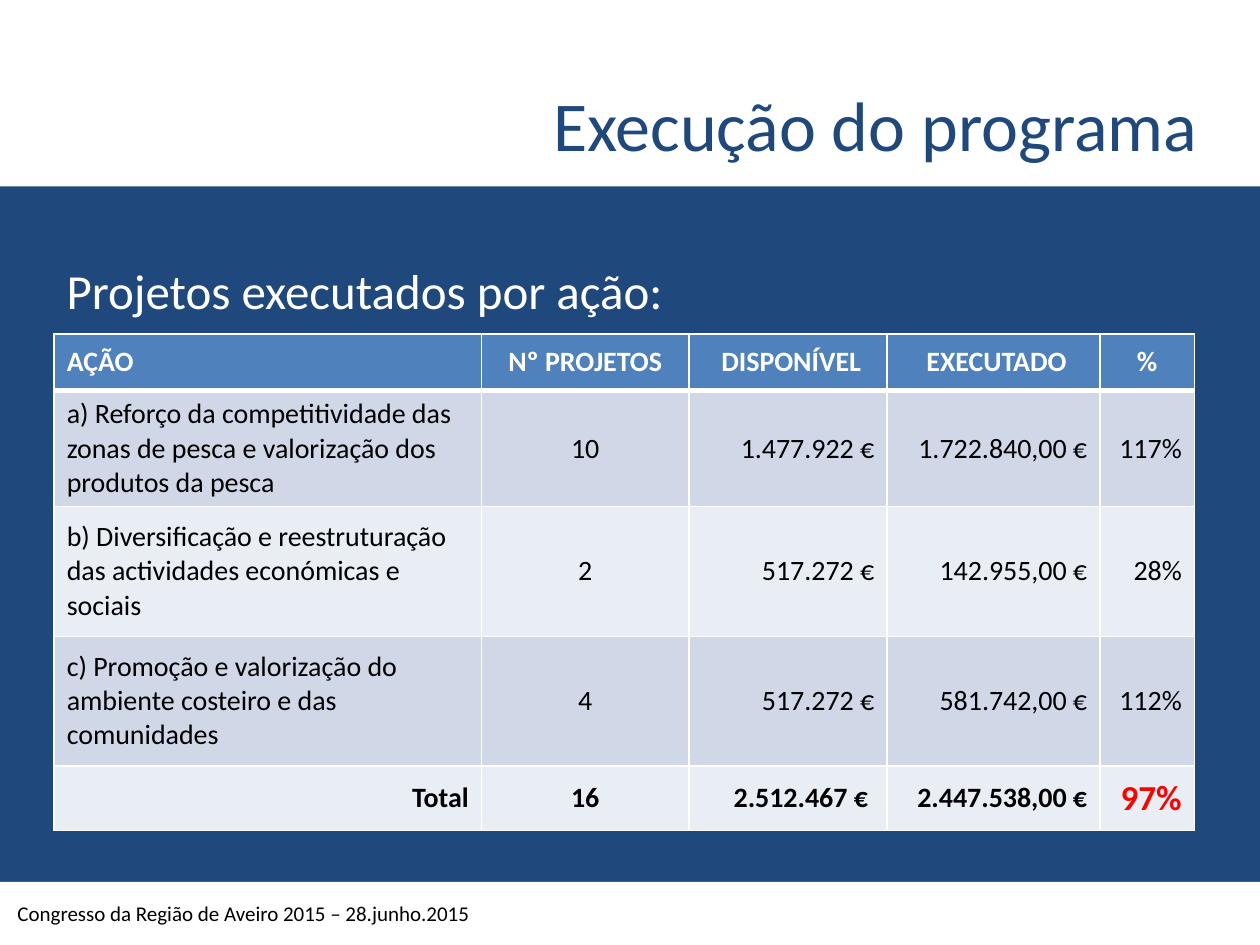
from lxml.etree import SubElement
from pptx import Presentation
from pptx.dml.color import RGBColor
from pptx.enum.shapes import MSO_SHAPE as Shape
from pptx.enum.text import MSO_ANCHOR as Anchor, PP_ALIGN as Align
from pptx.oxml.ns import qn
from pptx.util import Inches, Pt

# Content
TITLE = "Execução do programa"
SUBTITLE = "Projetos executados por ação:"
FOOTER = "Congresso da Região de Aveiro 2015 – 28.junho.2015"
ROWS = [
    ("AÇÃO", "Nº PROJETOS", " DISPONÍVEL", " EXECUTADO", "%"),
    ("a) Reforço da competitividade das zonas de pesca e valorização dos produtos da pesca",
     "10", "1.477.922 €", "1.722.840,00 €", "117%"),
    ("b) Diversificação e reestruturação das actividades económicas e sociais",
     "2", "517.272 €", "142.955,00 €", "28%"),
    ("c) Promoção e valorização do ambiente costeiro e das comunidades",
     "4", "517.272 €", "581.742,00 €", "112%"),
    ("Total", "16", "2.512.467 € ", "2.447.538,00 €", "97%"),
]
COLUMN_WIDTHS = [3.39, 1.65, 1.57, 1.69, 0.75]
ROW_HEIGHTS = [0.45, 0.92, 1.03, 1.03, 0.51]
HEADER_ALIGN = [Align.LEFT] + [Align.CENTER] * 4
BODY_ALIGN = [Align.LEFT, Align.CENTER] + [Align.RIGHT] * 3
TOTAL_ALIGN = [Align.RIGHT] + BODY_ALIGN[1:]

NAVY = RGBColor(0x1F, 0x49, 0x7D)
BLUE = RGBColor(0x4F, 0x81, 0xBD)
BAND_DARK = RGBColor(0xD0, 0xD8, 0xE8)
BAND_LIGHT = RGBColor(0xE9, 0xED, 0xF4)
WHITE = RGBColor(0xFF, 0xFF, 0xFF)
BLACK = RGBColor(0, 0, 0)
RED = RGBColor(0xFF, 0, 0)


def write(frame, text, size=16, color=BLACK, bold=False, align=Align.LEFT):
    para = frame.paragraphs[0]
    para.alignment = align
    span = para.add_run()
    span.text = text
    span.font.name = "Calibri"
    span.font.size = Pt(size)
    span.font.bold = bold
    span.font.color.rgb = color


def add_text(page, place, text, anchor=Anchor.TOP, wrap=True, margins=None, **style):
    frame = page.shapes.add_textbox(*map(Inches, place)).text_frame
    frame.word_wrap = wrap
    frame.vertical_anchor = anchor
    if margins:
        (frame.margin_left, frame.margin_top,
         frame.margin_right, frame.margin_bottom) = map(Inches, margins)
    write(frame, text, **style)


def add_band(page, top, height):
    band = page.shapes.add_shape(Shape.RECTANGLE, 0, Inches(top), Inches(10), Inches(height))
    band.shadow.inherit = False
    band.fill.solid()
    band.fill.fore_color.rgb = WHITE
    band.line.fill.background()


def set_borders(cell, bottom=1, top=1):
    properties = cell._tc.get_or_add_tcPr()
    for side, width in (("L", 1), ("R", 1), ("T", top), ("B", bottom)):
        line = SubElement(properties, qn(f"a:ln{side}"), w=str(Pt(width)))
        SubElement(SubElement(line, qn("a:solidFill")), qn("a:srgbClr"), val=str(WHITE))


def add_project_table(page):
    table = page.shapes.add_table(
        len(ROWS), len(COLUMN_WIDTHS), Inches(0.43), Inches(2.65),
        Inches(sum(COLUMN_WIDTHS)), Inches(sum(ROW_HEIGHTS))).table
    for column, width in zip(table.columns, COLUMN_WIDTHS):
        column.width = Inches(width)
    last = len(ROWS) - 1
    for r, values in enumerate(ROWS):
        table.rows[r].height = Inches(ROW_HEIGHTS[r])
        header, total = r == 0, r == last
        aligns = HEADER_ALIGN if header else TOTAL_ALIGN if total else BODY_ALIGN
        for c, text in enumerate(values):
            cell = table.cell(r, c)
            cell.vertical_anchor = Anchor.MIDDLE
            set_borders(cell, bottom=3 if header else 1, top=3 if r == 1 else 1)
            cell.fill.solid()
            cell.fill.fore_color.rgb = BLUE if header else BAND_DARK if r % 2 else BAND_LIGHT
            highlight = total and c == len(values) - 1
            write(cell.text_frame, text, size=20 if highlight else 16,
                  color=RED if highlight else WHITE if header else BLACK,
                  bold=header or total, align=aligns[c])


def main():
    deck = Presentation()
    deck.slide_width, deck.slide_height = Inches(10), Inches(7.5)
    page = deck.slides.add_slide(deck.slide_layouts[6])
    page.background.fill.solid()
    page.background.fill.fore_color.rgb = NAVY

    # White bands for footer and title
    add_band(page, 7, 0.5)
    add_band(page, 0, 1.48)

    # Table and texts
    add_project_table(page)
    add_text(page, (0.43, 2.02, 4.99, 0.57), SUBTITLE, wrap=False, size=28, color=WHITE)
    add_text(page, (0.04, 7.05, 4.37, 0.4), FOOTER, anchor=Anchor.MIDDLE, size=12)
    add_text(page, (0.51, 0.06, 8.99, 1.25), TITLE, anchor=Anchor.BOTTOM,
             margins=(0, 0.05, 0, 0), size=40, color=NAVY, align=Align.RIGHT)
    deck.save("out.pptx")


if __name__ == "__main__":
    main()
